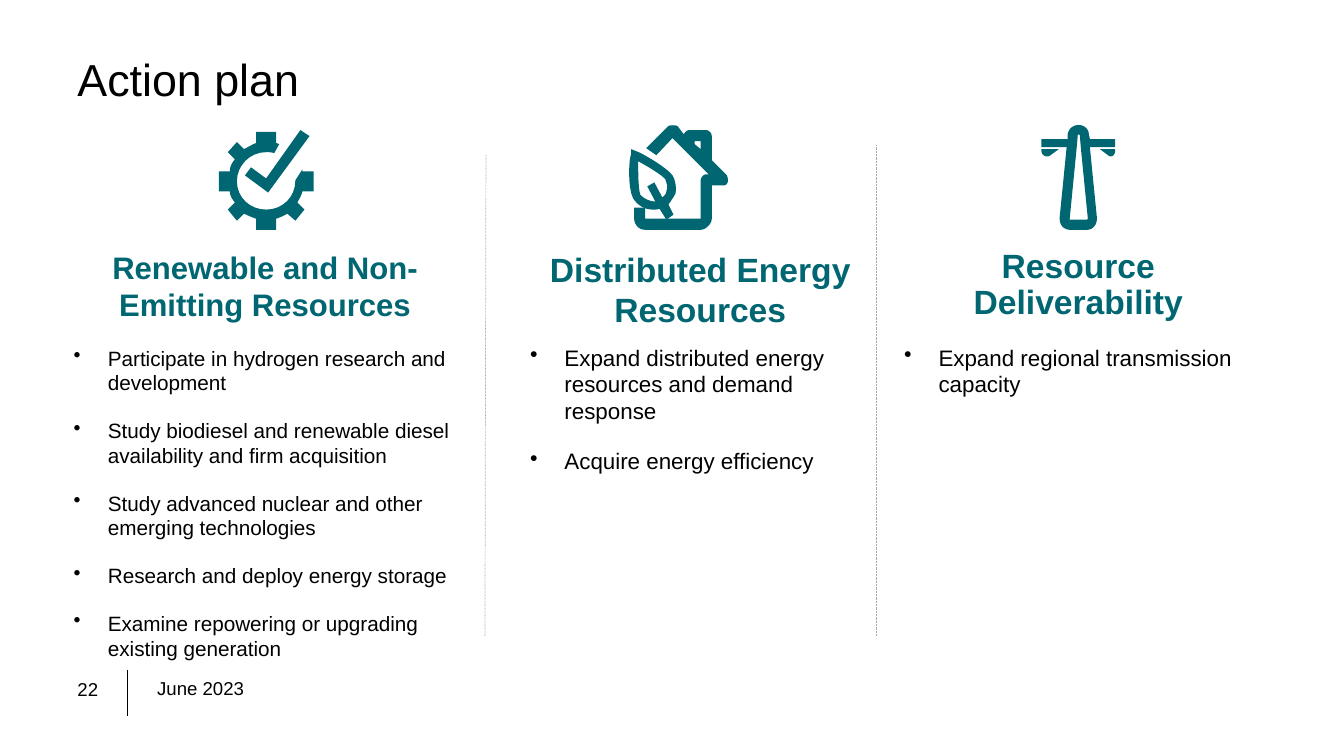
"""Build the action plan slide with three icon-led columns."""
from dataclasses import dataclass
from typing import Optional

import pptx
import pptx.dml.color
import pptx.enum.dml
import pptx.enum.shapes
import pptx.enum.text
import pptx.oxml
import pptx.oxml.ns
import pptx.slide
import pptx.util

Inches = pptx.util.Inches
Outline = list[tuple[float, ...]]
Box = tuple[float, float, float, float]


@dataclass(frozen=True)
class Theme:
    """Hold the colours, font and type sizes."""
    teal: str = "006671"
    black: str = "000000"
    grey: str = "A7A8AB"
    font: str = "Arial"
    title: float = 32
    foot: float = 13.3
    gap: float = 13.3


@dataclass(frozen=True)
class Block:
    """Describe a text box with an optional heading and bullets."""
    box: Box
    head: Optional[str] = None
    items: tuple[str, ...] = ()
    large: float = 24
    small: float = 16
    pitch: float = 1.0
    inset: tuple[float, float] = (0.13, 0.07)


@dataclass(frozen=True)
class Label:
    """Describe a plain line of text."""
    text: str
    box: Box
    size: float
    pitch: float = 1.0
    middle: bool = False


@dataclass(frozen=True)
class Rule:
    """Describe a thin straight line."""
    start: tuple[float, float]
    end: tuple[float, float]
    colour: str
    width: float
    dotted: bool = False


THEME = Theme()

LABELS = [
    Label("Action plan", (0.67, 0.4, 12, 0.83), THEME.title, 0.9, True),
    Label("22", (0.67, 6.68, 0.56, 0.33), THEME.foot),
    Label("June 2023", (1.46, 6.69, 4.61, 0.33), THEME.foot, 0.9),
]

RULES = [
    Rule((1.26, 6.65), (1.26, 7.1), THEME.black, 0.75),
    Rule((4.82, 1.54), (4.81, 6.31), THEME.grey, 0.5, True),
    Rule((8.69, 1.44), (8.69, 6.31), THEME.grey, 0.5, True),
]

BLOCKS = [
    Block((0.6, 2.39, 4.06, 4.18), "Renewable and Non-Emitting Resources", (
        "Participate in hydrogen research and development",
        "Study biodiesel and renewable diesel availability and firm acquisition",
        "Study advanced nuclear and other emerging technologies",
        "Research and deploy energy storage",
        "Examine repowering or upgrading existing generation",
    ), large=22.2, small=14.8),
    Block((5.22, 2.4, 3.45, 0.96), "Distributed Energy Resources"),
    Block((9.23, 2.4, 2.93, 0.89), "Resource Deliverability", pitch=0.9),
    Block((5.16, 3.36, 3.45, 1.41), items=(
        "Expand distributed energy resources and demand response",
        "Acquire energy efficiency",
    ), inset=(0.1, 0.05)),
    Block((8.87, 3.36, 3.8, 1.41), items=("Expand regional transmission capacity",),
          inset=(0.1, 0.05)),
]

TOWER: list[Outline] = [
    [(11.06, 1.38), (10.81, 1.38), (10.8, 1.33), (10.8, 1.28, 10.75, 1.24, 10.7, 1.24),
     (10.64, 1.24, 10.6, 1.28, 10.59, 1.33), (10.59, 1.38), (10.33, 1.38), (10.33, 1.46),
     (10.58, 1.46), (10.51, 2.16), (10.51, 2.2, 10.52, 2.23, 10.54, 2.25),
     (10.56, 2.27, 10.59, 2.28, 10.61, 2.28), (10.78, 2.28),
     (10.81, 2.28, 10.83, 2.27, 10.85, 2.25), (10.87, 2.23, 10.88, 2.2, 10.88, 2.16),
     (10.81, 1.46), (11.06, 1.46)],
    [(10.79, 2.17), (10.78, 2.18), (10.61, 2.18), (10.61, 2.17), (10.68, 1.46),
     (10.69, 1.34), (10.7, 1.33), (10.71, 1.34), (10.72, 1.46)],
]
LEFT_ARM: list[Outline] = [
    [(10.42, 1.54), (10.38, 1.57, 10.33, 1.54, 10.33, 1.5), (10.33, 1.48), (10.5, 1.48)],
]
RIGHT_ARM: list[Outline] = [
    [(10.99, 1.54), (11.02, 1.57, 11.06, 1.54, 11.06, 1.5), (11.06, 1.48), (10.91, 1.48)],
]
LEAF: list[Outline] = [
    [(6.28, 1.97), (6.33, 2.04, 6.39, 2.08, 6.48, 2.08), (6.5, 2.08, 6.53, 2.08, 6.54, 2.07),
     (6.61, 2.18), (6.68, 2.13), (6.63, 2.03), (6.65, 2, 6.68, 1.96, 6.7, 1.92),
     (6.71, 1.86, 6.7, 1.79, 6.67, 1.74), (6.61, 1.66, 6.37, 1.52, 6.31, 1.5),
     (6.26, 1.48), (6.26, 1.53), (6.24, 1.56, 6.22, 1.85, 6.28, 1.97)],
    [(6.33, 1.6), (6.44, 1.66, 6.57, 1.74, 6.6, 1.78), (6.61, 1.82, 6.63, 1.86, 6.61, 1.89),
     (6.61, 1.92, 6.6, 1.93, 6.57, 1.96), (6.49, 1.81), (6.42, 1.85), (6.5, 2),
     (6.45, 2, 6.38, 1.97, 6.35, 1.93), (6.33, 1.86, 6.33, 1.71, 6.33, 1.6)],
]
HOUSE: list[Outline] = [
    [(7.21, 1.74), (7.06, 1.59), (7.06, 1.35), (7.06, 1.32, 7.03, 1.29, 7, 1.29),
     (6.84, 1.29), (6.81, 1.29, 6.8, 1.31, 6.78, 1.33), (6.72, 1.25),
     (6.69, 1.24, 6.66, 1.24, 6.63, 1.25), (6.41, 1.47), (6.51, 1.54), (6.67, 1.37),
     (7.03, 1.73), (7, 1.73), (6.98, 1.73, 6.95, 1.76, 6.95, 1.79), (6.95, 2.17),
     (6.4, 2.17), (6.4, 2.06), (6.29, 2.06), (6.29, 2.17),
     (6.29, 2.22, 6.33, 2.28, 6.4, 2.28), (6.95, 2.28), (7, 2.28, 7.06, 2.22, 7.06, 2.17),
     (7.06, 1.84), (7.17, 1.84), (7.2, 1.84, 7.21, 1.83, 7.22, 1.8),
     (7.22, 1.79, 7.22, 1.76, 7.21, 1.74)],
    [(6.95, 1.48), (6.89, 1.43), (6.89, 1.4), (6.95, 1.4)],
]
GEAR: list[Outline] = [
    [(3, 1.68), (2.93, 1.79), (2.93, 1.96, 2.8, 2.08, 2.64, 2.08),
     (2.48, 2.08, 2.35, 1.96, 2.35, 1.8), (2.35, 1.64, 2.48, 1.51, 2.64, 1.51),
     (2.66, 1.51, 2.69, 1.51, 2.72, 1.52), (2.77, 1.43), (2.74, 1.42), (2.74, 1.31),
     (2.54, 1.31), (2.54, 1.42), (2.51, 1.43, 2.46, 1.46, 2.42, 1.48), (2.35, 1.41),
     (2.26, 1.51), (2.33, 1.58), (2.3, 1.62, 2.28, 1.65, 2.28, 1.7), (2.17, 1.7),
     (2.17, 1.9), (2.28, 1.9), (2.28, 1.94, 2.3, 1.97, 2.33, 2.01), (2.26, 2.08),
     (2.35, 2.19), (2.42, 2.12), (2.46, 2.14, 2.51, 2.16, 2.54, 2.17), (2.54, 2.28),
     (2.74, 2.28), (2.74, 2.17), (2.77, 2.16, 2.82, 2.14, 2.85, 2.12), (2.93, 2.19),
     (3.02, 2.08), (2.95, 2.01), (2.97, 1.97, 2.99, 1.94, 3, 1.9), (3.11, 1.9),
     (3.11, 1.7), (3, 1.7)],
]
CHECK: list[Outline] = [
    [(2.66, 1.91), (2.43, 1.74), (2.49, 1.66), (2.64, 1.77), (2.98, 1.29), (3.07, 1.35)],
]
ICONS = [TOWER, LEFT_ARM, RIGHT_ARM, LEAF, HOUSE, GEAR, CHECK]


def trace(outline: Outline, steps: int = 8) -> list[tuple[int, int]]:
    """Turn corners and cubic curves into a list of points."""
    spots = [outline[0]]
    for part in outline[1:]:
        if len(part) == 2:
            spots.append(part)
            continue
        ends = (spots[-1], part[:2], part[2:4], part[4:])
        for step in range(1, steps + 1):
            t = step / steps
            mix = ((1 - t) ** 3, 3 * t * (1 - t) ** 2, 3 * t * t * (1 - t), t ** 3)
            spots.append(tuple(sum(m * e[axis] for m, e in zip(mix, ends)) for axis in (0, 1)))
    return [(Inches(x), Inches(y)) for x, y in spots]


def draw_icon(slide: pptx.slide.Slide, icon: list[Outline]) -> None:
    """Draw one filled shape, with any holes."""
    first, *holes = [trace(outline) for outline in icon]
    pen = slide.shapes.build_freeform(*first[0], scale=1.0)
    pen.add_line_segments(first[1:], close=True)
    for hole in holes:
        pen.move_to(*hole[0])
        pen.add_line_segments(hole[1:], close=True)
    shape = pen.convert_to_shape()
    shape.shadow.inherit = False
    shape.fill.solid()
    shape.fill.fore_color.rgb = pptx.dml.color.RGBColor.from_string(THEME.teal)
    shape.line.fill.background()


def draw_rule(slide: pptx.slide.Slide, rule: Rule) -> None:
    """Draw one straight line."""
    ends = [Inches(v) for v in (*rule.start, *rule.end)]
    line = slide.shapes.add_connector(pptx.enum.shapes.MSO_CONNECTOR.STRAIGHT, *ends)
    line.line.color.rgb = pptx.dml.color.RGBColor.from_string(rule.colour)
    line.line.width = pptx.util.Pt(rule.width)
    if rule.dotted:
        line.line.dash_style = pptx.enum.dml.MSO_LINE.ROUND_DOT
    line._element.spPr.append(pptx.oxml.parse_xml(
        f"<a:effectLst {pptx.oxml.ns.nsdecls('a')}/>"))


def add_box(slide: pptx.slide.Slide, box: Box):
    """Add a wrapping text box and return its frame."""
    frame = slide.shapes.add_textbox(*map(Inches, box)).text_frame
    frame.word_wrap = True
    return frame


def set_text(para, text: str, size: float, colour: str, pitch: float, bold: bool = False) -> None:
    """Write a paragraph and format its runs."""
    para.text = text
    para.line_spacing = pitch
    for run in para.runs:
        run.font.name, run.font.size, run.font.bold = THEME.font, pptx.util.Pt(size), bold
        run.font.color.rgb = pptx.dml.color.RGBColor.from_string(colour)


def draw_label(slide: pptx.slide.Slide, label: Label) -> None:
    """Draw one plain label."""
    frame = add_box(slide, label.box)
    if label.middle:
        frame.vertical_anchor = pptx.enum.text.MSO_ANCHOR.MIDDLE
    set_text(frame.paragraphs[0], label.text, label.size, THEME.black, label.pitch)


def draw_block(slide: pptx.slide.Slide, block: Block) -> None:
    """Draw a heading and its bullets in one box."""
    frame = add_box(slide, block.box)
    frame.margin_left = frame.margin_right = Inches(block.inset[0])
    frame.margin_top = frame.margin_bottom = Inches(block.inset[1])
    lines = ([block.head] if block.head else []) + list(block.items)
    for index, text in enumerate(lines):
        para = frame.add_paragraph() if index else frame.paragraphs[0]
        para.space_after = pptx.util.Pt(THEME.gap)
        if text == block.head:
            para.alignment = pptx.enum.text.PP_ALIGN.CENTER
            set_text(para, text, block.large, THEME.teal, block.pitch, True)
            continue
        if index:
            para.space_before = pptx.util.Pt(round(block.small * 0.2, 1))
        props = para._p.get_or_add_pPr()
        props.set("marL", str(Inches(0.34)))
        props.set("indent", str(Inches(-0.34)))
        props.append(pptx.oxml.parse_xml(
            f"<a:buChar {pptx.oxml.ns.nsdecls('a')} char='•'/>"))
        set_text(para, text, block.small, THEME.black, block.pitch)


def main() -> None:
    """Build and save the slide."""
    deck = pptx.Presentation()
    deck.slide_width, deck.slide_height = Inches(13.33), Inches(7.5)
    slide = deck.slides.add_slide(deck.slide_layouts[6])
    for draw, things in ((draw_label, LABELS), (draw_rule, RULES),
                         (draw_block, BLOCKS), (draw_icon, ICONS)):
        for thing in things:
            draw(slide, thing)
    deck.save("out.pptx")


if __name__ == "__main__":
    main()
